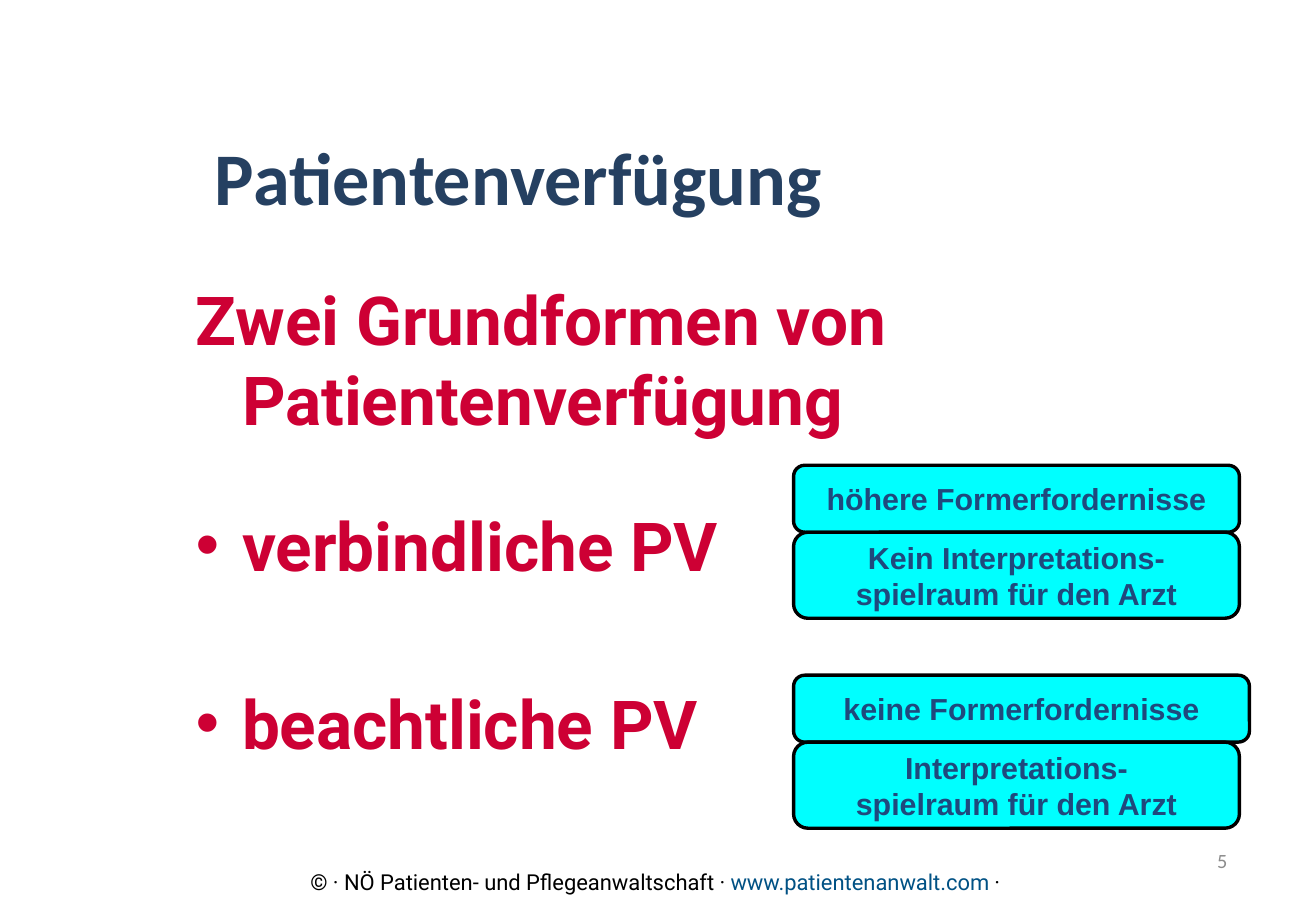
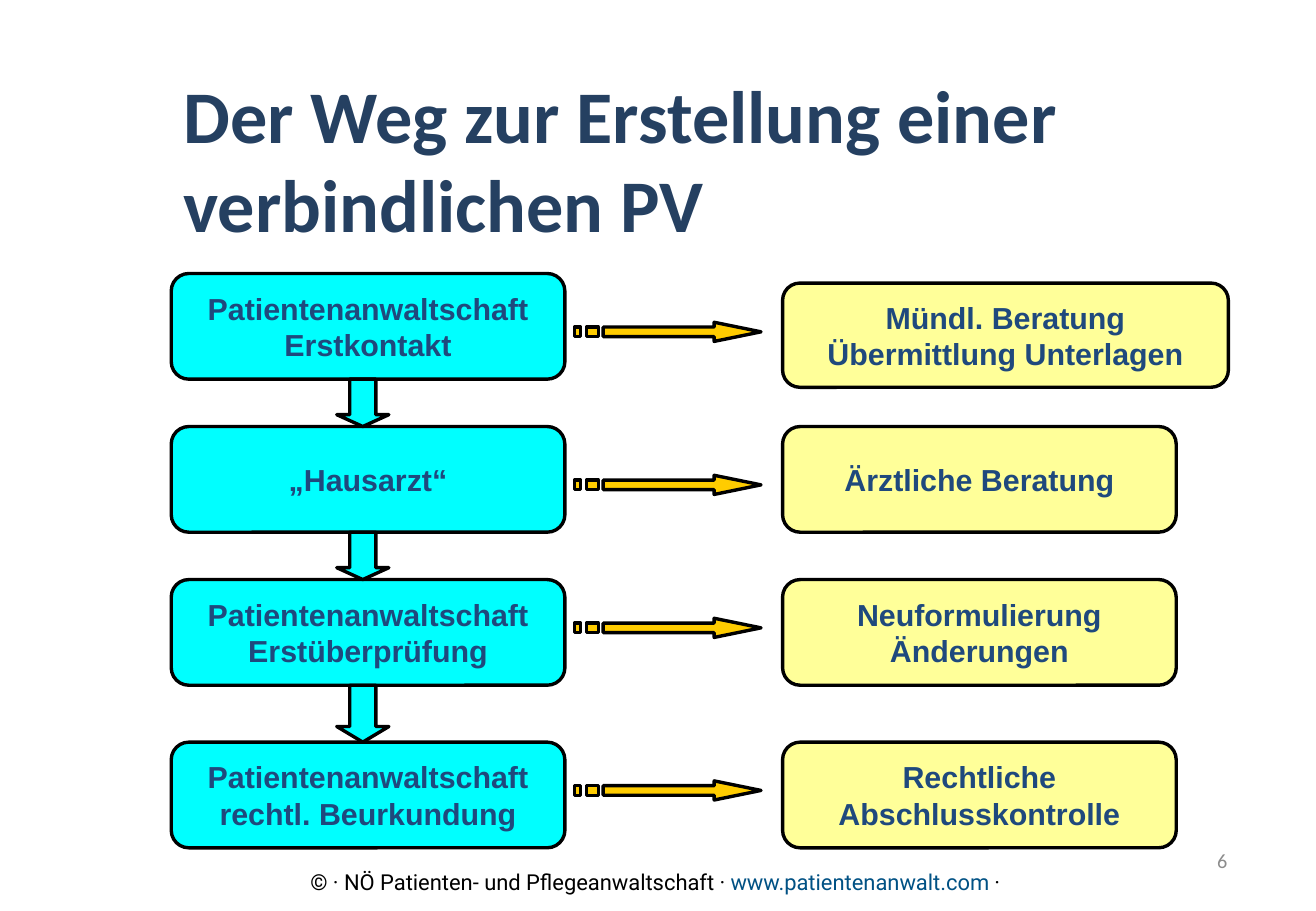
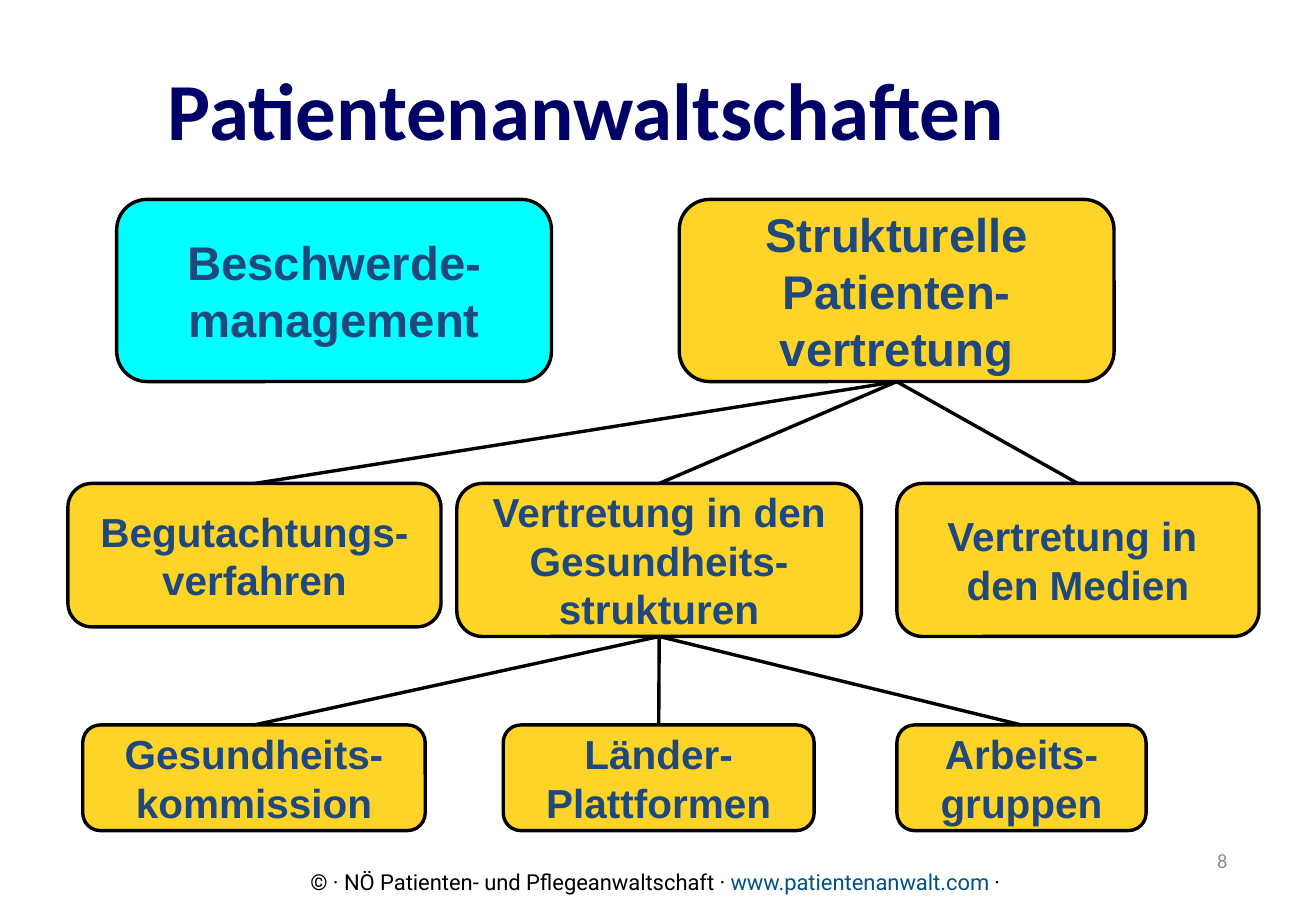
from collections import namedtuple

from lxml.etree import SubElement
from pptx import Presentation
from pptx.dml.color import RGBColor
from pptx.enum.shapes import MSO_CONNECTOR, MSO_SHAPE
from pptx.enum.text import MSO_ANCHOR as Anchor, MSO_AUTO_SIZE as AutoSize, PP_ALIGN as Align
from pptx.oxml.ns import qn
from pptx.util import Cm, Pt

Box = namedtuple("Box", "left top width height")

CYAN, YELLOW, GOLD = "00FFFF", "FFFF99", "FFCC00"
BLACK, LINK_BLUE = "000000", "005184"
GOLD_ALPHA = 84
LINE_WIDTH = Pt(2)
SLIDE_SIZE = {"slide_width": Cm(27.51), "slide_height": Cm(19.05)}

TITLE_FONT = {"name": "Calibri", "size": Pt(44), "bold": True, "color": "254061"}
LARGE_TITLE_FONT = {**TITLE_FONT, "size": Pt(48), "color": "000066"}
BODY_FONT = {"name": "Roboto", "size": Pt(40), "bold": True, "color": "CD0034"}
BOX_FONT = {"name": "Arial", "size": Pt(18), "bold": True, "color": "1F497D"}
BRANCH_FONT = {**BOX_FONT, "size": Pt(24)}
TOP_FONT = {**BOX_FONT, "size": Pt(28)}
FOOTER_FONT = {"name": "Roboto", "size": Pt(13), "color": BLACK}
NUMBER_FONT = {"name": "Calibri", "size": Pt(12), "color": "8C8C8C"}

TEXT_FRAME = {"word_wrap": True, "auto_size": AutoSize.NONE, "vertical_anchor": Anchor.TOP}
LABEL_FRAME = {"word_wrap": False, "vertical_anchor": Anchor.MIDDLE}
NUMBER_FRAME = {**TEXT_FRAME, "vertical_anchor": Anchor.MIDDLE}

NUMBER_BOX = Box(20.17, 17.35, 5.74, 1.27)
FOOTER_BOX = Box(0, 18.03, 27.51, 1.35)


def rgb(value):
    """Turn a hex string into a colour."""
    return RGBColor.from_string(value)


def lengths(box):
    """Turn the sides of a box into lengths."""
    return [Cm(side) for side in box]


def set_values(target, values):
    """Set each named attribute of the target."""
    for name, value in values.items():
        setattr(target, name, value)


def format_font(font, values):
    """Apply a font format with its colour."""
    set_values(font, {name: value for name, value in values.items() if name != "color"})
    font.color.rgb = rgb(values["color"])


def write_text(shape, text, font, frame, alignment):
    """Fill a shape with text in one format."""
    text_frame = shape.text_frame
    set_values(text_frame, frame)
    text_frame.text = text
    for paragraph in text_frame.paragraphs:
        paragraph.alignment = alignment
        for run in paragraph.runs:
            format_font(run.font, font)


def paint(shape, color):
    """Give a shape its fill and the black outline."""
    shape.shadow.inherit = False
    shape.fill.solid()
    shape.fill.fore_color.rgb = rgb(color)
    shape.line.color.rgb = rgb(BLACK)
    shape.line.width = LINE_WIDTH


def add_label_box(slide, box, text, color, font=BOX_FONT, alpha=None):
    """Add a rounded box with a centred label."""
    shape = slide.shapes.add_shape(MSO_SHAPE.ROUNDED_RECTANGLE, *lengths(box))
    paint(shape, color)
    if alpha:
        fill_color = next(shape.element.spPr.iter(qn("a:srgbClr")))
        SubElement(fill_color, qn("a:alpha"), val=str(alpha * 1000))
    write_text(shape, text, font, LABEL_FRAME, Align.CENTER)
    return shape


def add_titled_slide(presentation, number, title, box, font=TITLE_FONT):
    """Add a slide with its title and page number."""
    slide = presentation.slides.add_slide(presentation.slide_layouts[5])
    shape = slide.shapes.title
    set_values(shape, dict(zip(Box._fields, lengths(box))))
    write_text(shape, title, font, TEXT_FRAME, Align.LEFT)
    number_box = slide.shapes.add_textbox(*lengths(NUMBER_BOX))
    write_text(number_box, str(number), NUMBER_FONT, NUMBER_FRAME, Align.RIGHT)
    return slide


def add_shared_footer(slide):
    """Place the footer on the layout that all slides use."""
    footer = slide.shapes.add_textbox(*lengths(FOOTER_BOX))
    set_values(footer.text_frame, TEXT_FRAME)
    paragraph = footer.text_frame.paragraphs[0]
    paragraph.alignment = Align.CENTER
    for text, color in (
        ("© · NÖ Patienten- und Pflegeanwaltschaft · ", BLACK),
        ("www.patientenanwalt.com", LINK_BLUE),
        (" · ", BLACK),
    ):
        run = paragraph.add_run()
        run.text = text
        format_font(run.font, {**FOOTER_FONT, "color": color})
    footer.element.nvSpPr.cNvPr.set("id", "20")
    slide.slide_layout.shapes.element.append(footer.element)


def add_forms_list(slide, box):
    """Add the heading and the two bulleted forms."""
    shape = slide.shapes.add_textbox(*lengths(box))
    lines = ("Zwei Grundformen von Patientenverfügung", "verbindliche PV", "beachtliche PV")
    write_text(shape, "\n".join(lines), BODY_FONT, TEXT_FRAME, Align.LEFT)
    hanging = Cm(0.97)
    for paragraph, space in zip(shape.text_frame.paragraphs, (0, 38, 57.5)):
        properties = paragraph._p.get_or_add_pPr()
        properties.set("marL", str(hanging))
        properties.set("indent", str(-hanging))
        if space:
            SubElement(properties, qn("a:buFont"), typeface="Arial")
            SubElement(properties, qn("a:buChar"), char="•")
            paragraph.space_before = Pt(space)


def add_feature_pair(slide, box, formality, freedom, formality_width):
    """Stack the formality box on the interpretation box."""
    upper_height = 1.4
    upper = Box(box.left, box.top, formality_width, upper_height)
    lower = Box(box.left, box.top + upper_height, box.width, box.height - upper_height)
    add_label_box(slide, upper, formality, CYAN)
    add_label_box(slide, lower, freedom, CYAN)


def add_striped_arrow(slide, left, top):
    """Draw a right arrow with two stripes at its tail."""
    body = [(292, 10), (60, 10), (60, 30), (292, 30), (292, 40), (390, 20)]
    builder = slide.shapes.build_freeform(292, 0, scale=Cm(0.01))
    builder.add_line_segments(body, close=True)
    for start, end in ((25, 50), (0, 13)):
        builder.move_to(start, 10)
        builder.add_line_segments([(start, 30), (end, 30), (end, 10)], close=True)
    paint(builder.convert_to_shape(Cm(left), Cm(top)), GOLD)


def add_down_arrow(slide, box, head):
    """Draw the arrow that leads to the next step."""
    shape = slide.shapes.add_shape(MSO_SHAPE.DOWN_ARROW, *lengths(box))
    shape.adjustments[1] = head
    paint(shape, CYAN)


def add_step(slide, box, step, result, result_box, arrow_drop):
    """Add a step, its result and the arrow between them."""
    add_label_box(slide, box, step, CYAN)
    add_label_box(slide, result_box, result, YELLOW)
    add_striped_arrow(slide, box.left + 8.43, box.top + arrow_drop)


def add_branches(slide, parent, boxes):
    """Add a row of boxes, each joined to the parent."""
    children = []
    for box, text in boxes:
        child = add_label_box(slide, box, text, GOLD, BRANCH_FONT, GOLD_ALPHA)
        line = slide.shapes.add_connector(MSO_CONNECTOR.STRAIGHT, 0, 0, 0, 0)
        line.begin_connect(parent, 2)
        line.end_connect(child, 0)
        line.line.color.rgb = rgb(BLACK)
        line.line.width = LINE_WIDTH
        SubElement(line.element.spPr, qn("a:effectLst"))
        children.append(child)
    return children


def build_forms_slide(presentation):
    """Build the slide on the two forms."""
    slide = add_titled_slide(presentation, 5, "Patientenverfügung", Box(4.24, 2.62, 21.89, 2.03))
    add_forms_list(slide, Box(3.84, 5.68, 21.6, 11.5))
    for top, formality, freedom, width in (
        (9.73, "höhere Formerfordernisse", "Kein Interpretations-\vspielraum für den Arzt", 9.32),
        (14.12, "keine Formerfordernisse", "Interpretations-\vspielraum für den Arzt", 9.53),
    ):
        add_feature_pair(slide, Box(16.59, top, 9.32, 3.2), formality, freedom, width)
    return slide


def build_steps_slide(presentation):
    """Build the slide on the steps."""
    title = "Der Weg zur Erstellung einer verbindlichen PV"
    slide = add_titled_slide(presentation, 6, title, Box(3.58, 1.32, 21.89, 3.81))
    left, result_left, width, height = 3.58, 16.36, 8.23, 2.21
    steps = (
        (5.72, "Patientenanwaltschaft\nErstkontakt", "Mündl. Beratung\nÜbermittlung Unterlagen", 1.02),
        (8.92, "„Hausarzt“", "Ärztliche Beratung", 1.02),
        (12.12, "Patientenanwaltschaft\nErstüberprüfung", "Neuformulierung\nÄnderungen", 0.81),
        (15.52, "Patientenanwaltschaft\nrechtl. Beurkundung", "Rechtliche\nAbschlusskontrolle", 0.81),
    )
    for index, (top, step, result, arrow_drop) in enumerate(steps):
        result_box = Box(result_left, top, width, height) if index else Box(result_left, 5.92, 9.32, 2.18)
        add_step(slide, Box(left, top, width, height), step, result, result_box, arrow_drop)
    for (top, *_), (next_top, *_), head in zip(steps, steps[1:], (0.25, 0.25, 0.3)):
        bottom = top + height
        add_down_arrow(slide, Box(left + 3.46, bottom, 1.09, next_top - bottom), head)


def build_offices_slide(presentation):
    """Build the slide on the tasks of the offices."""
    title_box = Box(3.25, 1.12, 23.11, 2.67)
    slide = add_titled_slide(presentation, 8, "Patientenanwaltschaften", title_box, LARGE_TITLE_FONT)
    add_label_box(slide, Box(2.44, 4.17, 9.09, 3.81), "Beschwerde-\vmanagement", CYAN, TOP_FONT)
    structural = add_label_box(
        slide, Box(14.2, 4.17, 9.09, 3.81), "Strukturelle\nPatienten-\vvertretung", GOLD, TOP_FONT, GOLD_ALPHA
    )
    task_top, group_top, group_height = 10.11, 15.16, 2.21
    tasks = add_branches(slide, structural, (
        (Box(1.42, task_top, 7.8, 3), "Begutachtungs-\vverfahren"),
        (Box(9.55, task_top, 8.46, 3.2), "Vertretung in den\nGesundheits-\vstrukturen"),
        (Box(18.75, task_top, 7.57, 3.2), "Vertretung in \vden Medien"),
    ))
    add_branches(slide, tasks[1], (
        (Box(1.73, group_top, 7.16, group_height), "Gesundheits-\vkommission"),
        (Box(10.52, group_top, 6.5, group_height), "Länder-\vPlattformen"),
        (Box(18.75, group_top, 5.21, group_height), "Arbeits-\vgruppen"),
    ))


def main():
    """Build and save the presentation."""
    presentation = Presentation()
    set_values(presentation, SLIDE_SIZE)
    add_shared_footer(build_forms_slide(presentation))
    build_steps_slide(presentation)
    build_offices_slide(presentation)
    presentation.save("out.pptx")


if __name__ == "__main__":
    main()
